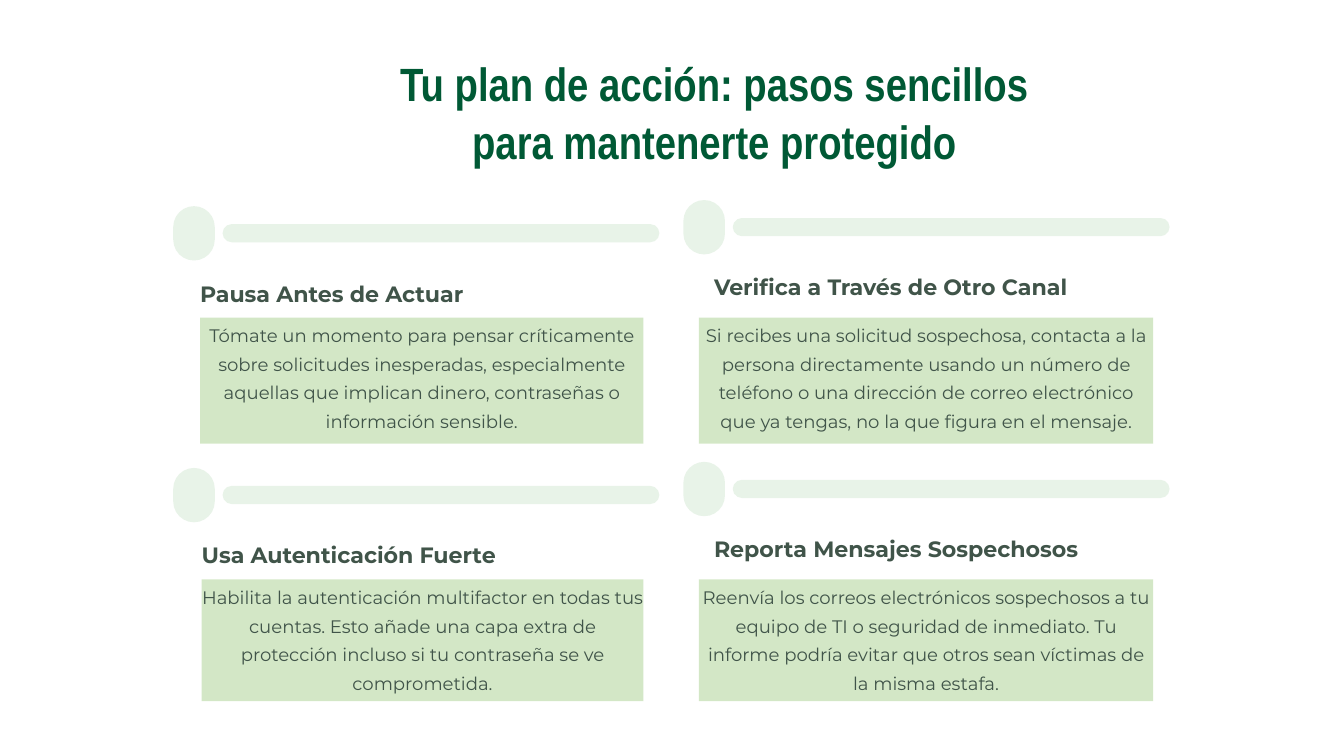
from dataclasses import dataclass
from lxml.etree import SubElement
from pptx import Presentation
from pptx.dml.color import RGBColor as RGB
from pptx.enum.shapes import MSO_SHAPE as Shape
from pptx.enum.text import MSO_ANCHOR as Anchor, MSO_AUTO_SIZE as Fit, PP_ALIGN as Align
from pptx.oxml.ns import qn
from pptx.util import Pt


@dataclass(frozen=True)
class Theme:
    title: RGB = RGB.from_string("005935")
    ink: RGB = RGB.from_string("405449")
    pale: RGB = RGB.from_string("E8F3E8")
    card: RGB = RGB.from_string("A9D18E")
    wide: str = "Arial Narrow"
    body: str = "Montserrat"
    big: float = 40
    mid: float = 19
    small: float = 15.5


theme = Theme()
deck = Presentation()
deck.slide_width, deck.slide_height = Pt(1152), Pt(648)
slide = deck.slides.add_slide(deck.slide_layouts[5])


def write(box, text, face, size, color, lead, align, bold=False, wrap=True):
    frame = box.text_frame
    frame.text = text
    frame.auto_size = Fit.NONE
    frame.word_wrap = wrap
    frame.vertical_anchor = Anchor.TOP
    frame.margin_left = frame.margin_top = frame.margin_right = frame.margin_bottom = 0
    para = frame.paragraphs[0]
    para.alignment = align
    para.line_spacing = Pt(lead)
    font = para.runs[0].font
    font.name, font.size, font.bold = face, Pt(size), bold
    font.color.rgb = color


def block(kind, x, y, w, h, color):
    shape = slide.shapes.add_shape(kind, Pt(x), Pt(y), Pt(w), Pt(h))
    shape.shadow.inherit = False
    shape.fill.solid()
    shape.fill.fore_color.rgb = color
    shape.line.fill.background()
    return shape


title = slide.shapes.title
title.left, title.top, title.width, title.height = Pt(308), Pt(45.5), Pt(608.5), Pt(97)
write(title, "Tu plan de acción: pasos sencillos para mantenerte protegido",
      theme.wide, theme.big, theme.title, 49.5, Align.CENTER, bold=True)

steps = [
    ("Pausa Antes de Actuar",
     "Tómate un momento para pensar críticamente sobre solicitudes inesperadas, especialmente aquellas que implican dinero, contraseñas o información sensible."),
    ("Verifica a Través de Otro Canal",
     "Si recibes una solicitud sospechosa, contacta a la persona directamente usando un número de teléfono o una dirección de correo electrónico que ya tengas, no la que figura en el mensaje."),
    ("Usa Autenticación Fuerte",
     "Habilita la autenticación multifactor en todas tus cuentas. Esto añade una capa extra de protección incluso si tu contraseña se ve comprometida."),
    ("Reporta Mensajes Sospechosos",
     "Reenvía los correos electrónicos sospechosos a tu equipo de TI o seguridad de inmediato. Tu informe podría evitar que otros sean víctimas de la misma estafa."),
]
pitch = 224.4
heads = [171.5, 612, 172.8, 612]
cards = [(171.5, 380), (599, 389.5), (172.8, 378.7), (599, 389.5)]
tall = [108, 104.4]

for i, (name, text) in enumerate(steps):
    row, col = divmod(i, 2)
    left = 148.5 + 437.3 * col
    top = 176.7 + pitch * row - 5.2 * col

    bar = block(Shape.ROUNDED_RECTANGLE, left + 42.3, top + 15.4, 374.4, 15.6, theme.pale)
    pill = block(Shape.ROUNDED_RECTANGLE, left, top, 35.6, 46.6, theme.pale)
    bar.adjustments[0] = pill.adjustments[0] = 0.5

    head = slide.shapes.add_textbox(Pt(heads[i]), Pt(top + 62), Pt(234), Pt(24.5))
    write(head, name, theme.body, theme.mid, theme.ink, 24, Align.LEFT, bold=True, wrap=False)

    x, wide = cards[i]
    card = block(Shape.RECTANGLE, x, 272.3 + pitch * row, wide, tall[row], theme.card)
    tint = card.fill._xPr.find(qn("a:solidFill"))[0]
    SubElement(tint, qn("a:alpha"), val="50000")
    write(card, text, theme.body, theme.small, theme.ink, 24.5, Align.CENTER)

deck.save("out.pptx")
